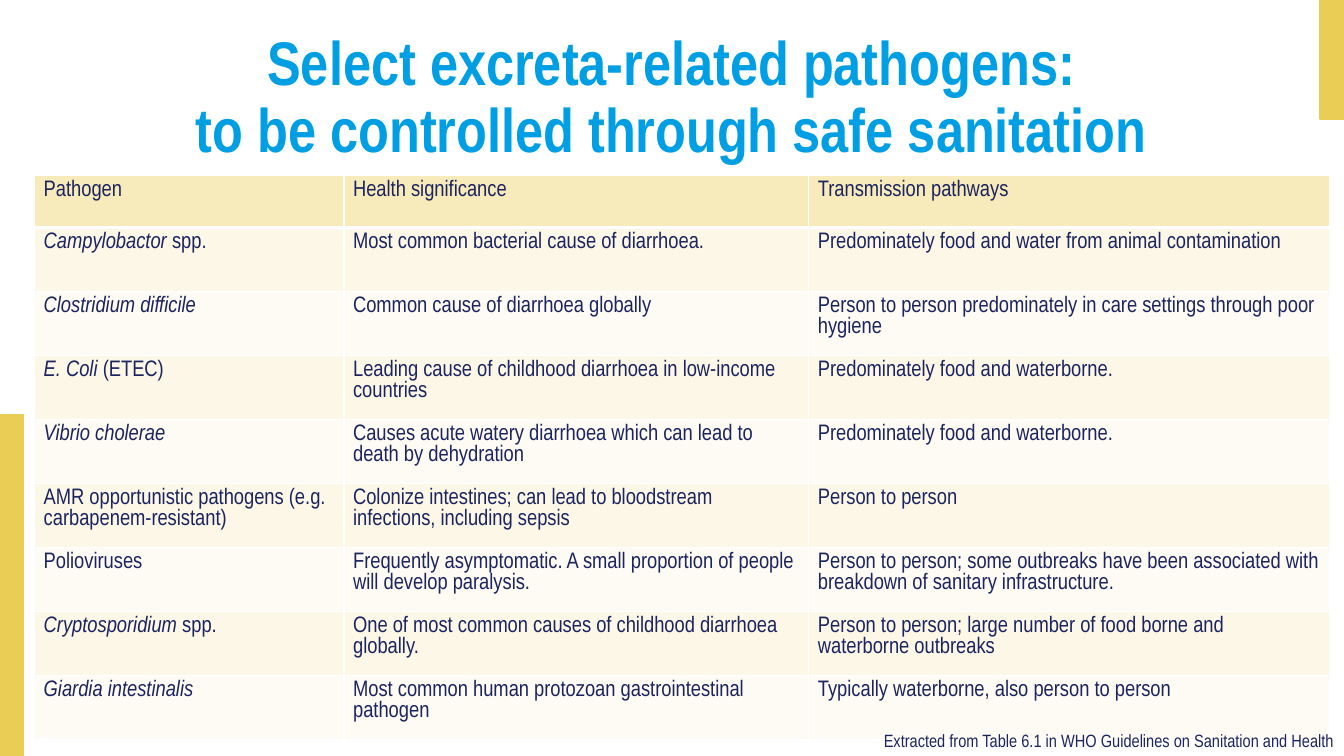
from dataclasses import dataclass

from lxml.etree import SubElement
from pptx import Presentation
from pptx.dml.color import RGBColor
from pptx.enum.shapes import MSO_SHAPE
from pptx.enum.text import MSO_ANCHOR, MSO_AUTO_SIZE, PP_ALIGN
from pptx.oxml.ns import qn
from pptx.util import Pt


@dataclass(frozen=True)
class Theme:
    font: str = "Arial Narrow"
    title: str = "009EE3"
    ink: str = "1C245F"
    gold: str = "EACD54"
    header: str = "F7EBBB"
    bands: tuple = ("FCF7E7", "FDFBF3")
    border: str = "FFFFFF"
    title_size: float = 44
    body_size: float = 16
    source_size: float = 12.7
    body_leading: float = 15


THEME = Theme()

TITLE_LINES = ["Select excreta-related pathogens:", "to be controlled through safe sanitation"]
HEADINGS = ["Pathogen", "Health significance", "Transmission pathways"]
PATHOGENS = [
    ("Campylobactor", " spp.", "Most common bacterial cause of diarrhoea.",
     "Predominately food and water from animal contamination"),
    ("Clostridium difficile", "", "Common cause of diarrhoea globally",
     "Person to person predominately in care settings through poor hygiene"),
    ("E. Coli ", "(ETEC)", "Leading cause of childhood diarrhoea in low-income countries",
     "Predominately food and waterborne."),
    ("Vibrio cholerae", "", "Causes acute watery diarrhoea which can lead to death by dehydration",
     "Predominately food and waterborne."),
    ("", "AMR opportunistic pathogens (e.g. carbapenem-resistant)",
     "Colonize intestines; can lead to bloodstream infections, including sepsis",
     "Person to person"),
    ("", "Polioviruses",
     "Frequently asymptomatic. A small proportion of people will develop paralysis.",
     "Person to person; some outbreaks have been associated with breakdown of sanitary infrastructure."),
    ("Cryptosporidium", " spp.", "One of most common causes of childhood diarrhoea globally.",
     "Person to person; large number of food borne and waterborne outbreaks"),
    ("Giardia intestinalis", "", "Most common human protozoan gastrointestinal pathogen",
     "Typically waterborne, also person to person"),
]
SOURCE = "Extracted from Table 6.1 in WHO Guidelines on Sanitation and Health"

SLIDE_WIDTH, SLIDE_HEIGHT = 960, 540
BAR_WIDTH = 17
LEFT_BAR_HEIGHT, RIGHT_BAR_HEIGHT = 244, 85
TITLE_BOX = (66, 19.5, 828, 56)
TABLE_LEFT, TABLE_TOP = 24.75, 125.5
COLUMN_WIDTHS = [221, 332, 371.75]
HEADER_HEIGHT, ROW_HEIGHT = 37, 45.7
SOURCE_WIDTH, SOURCE_HEIGHT = 419, 38


def points(*lengths):
    return [Pt(length) for length in lengths]


def add_run(paragraph, text, size, color, bold=False, italic=False):
    run = paragraph.add_run()
    run.text = text
    run.font.name = THEME.font
    run.font.size = Pt(size)
    run.font.bold = bold
    run.font.italic = italic
    run.font.color.rgb = RGBColor.from_string(color)


def add_bar(slide, left, top, height):
    bar = slide.shapes.add_shape(MSO_SHAPE.RECTANGLE, *points(left, top, BAR_WIDTH, height))
    bar.shadow.inherit = False
    bar.fill.solid()
    bar.fill.fore_color.rgb = RGBColor.from_string(THEME.gold)
    bar.line.color.rgb = RGBColor.from_string(THEME.gold)
    bar.line.width = Pt(1)


def add_title(slide):
    title = slide.shapes.title
    title.left, title.top, title.width, title.height = points(*TITLE_BOX)
    frame = title.text_frame
    frame.auto_size = MSO_AUTO_SIZE.NONE
    frame.vertical_anchor = MSO_ANCHOR.TOP
    frame.word_wrap = True
    heading = frame.paragraphs[0]
    heading.alignment = PP_ALIGN.CENTER
    heading.line_spacing = 0.9
    for index, line in enumerate(TITLE_LINES):
        if index:
            heading.add_line_break()
        add_run(heading, line, THEME.title_size, THEME.title, bold=True)


def set_borders(cell, bottom_width=1, top_width=1):
    properties = cell._tc.get_or_add_tcPr()
    widths = {"a:lnL": 1, "a:lnR": 1, "a:lnT": top_width, "a:lnB": bottom_width}
    for position, (side, width) in enumerate(widths.items()):
        border = SubElement(properties, qn(side), w=str(Pt(width)))
        fill = SubElement(border, qn("a:solidFill"))
        SubElement(fill, qn("a:srgbClr"), val=THEME.border)
        properties.insert(position, border)


def fill_cell(cell, runs, color):
    cell.fill.solid()
    cell.fill.fore_color.rgb = RGBColor.from_string(color)
    cell.vertical_anchor = MSO_ANCHOR.TOP
    cell.margin_left, cell.margin_right = points(6.5, 6.5)
    cell.margin_top, cell.margin_bottom = points(3.6, 3.6)
    entry = cell.text_frame.paragraphs[0]
    entry.line_spacing = Pt(THEME.body_leading)
    for text, italic in runs:
        if text:
            add_run(entry, text, THEME.body_size, THEME.ink, italic=italic)


def add_pathogen_table(slide):
    height = HEADER_HEIGHT + ROW_HEIGHT * len(PATHOGENS)
    frame = slide.shapes.add_table(
        len(PATHOGENS) + 1, len(HEADINGS),
        *points(TABLE_LEFT, TABLE_TOP, sum(COLUMN_WIDTHS), height))
    table = frame.table
    table.first_row = False
    table.horz_banding = False
    for column, width in zip(table.columns, COLUMN_WIDTHS):
        column.width = Pt(width)
    rows = [[[(heading, False)] for heading in HEADINGS]]
    for species, suffix, significance, pathway in PATHOGENS:
        rows.append([[(species, True), (suffix, False)], [(significance, False)], [(pathway, False)]])
    for row_index, row in enumerate(rows):
        is_header = row_index == 0
        table.rows[row_index].height = Pt(HEADER_HEIGHT if is_header else ROW_HEIGHT)
        color = THEME.header if is_header else THEME.bands[(row_index - 1) % 2]
        for column_index, runs in enumerate(row):
            cell = table.cell(row_index, column_index)
            fill_cell(cell, runs, color)
            set_borders(cell, bottom_width=3 if is_header else 1,
                        top_width=3 if row_index == 1 else 1)


def add_source(slide):
    source = slide.shapes.add_textbox(*points(
        SLIDE_WIDTH - SOURCE_WIDTH, SLIDE_HEIGHT - SOURCE_HEIGHT, SOURCE_WIDTH, SOURCE_HEIGHT))
    frame = source.text_frame
    frame.word_wrap = True
    frame.vertical_anchor = MSO_ANCHOR.BOTTOM
    credit = frame.paragraphs[0]
    credit.alignment = PP_ALIGN.RIGHT
    add_run(credit, SOURCE, THEME.source_size, THEME.ink)


def main():
    presentation = Presentation()
    presentation.slide_width, presentation.slide_height = points(SLIDE_WIDTH, SLIDE_HEIGHT)
    slide = presentation.slides.add_slide(presentation.slide_layouts[5])
    add_bar(slide, 0, SLIDE_HEIGHT - LEFT_BAR_HEIGHT, LEFT_BAR_HEIGHT)
    add_bar(slide, SLIDE_WIDTH - BAR_WIDTH, 0, RIGHT_BAR_HEIGHT)
    add_title(slide)
    add_pathogen_table(slide)
    add_source(slide)
    presentation.save("out.pptx")


if __name__ == "__main__":
    main()
